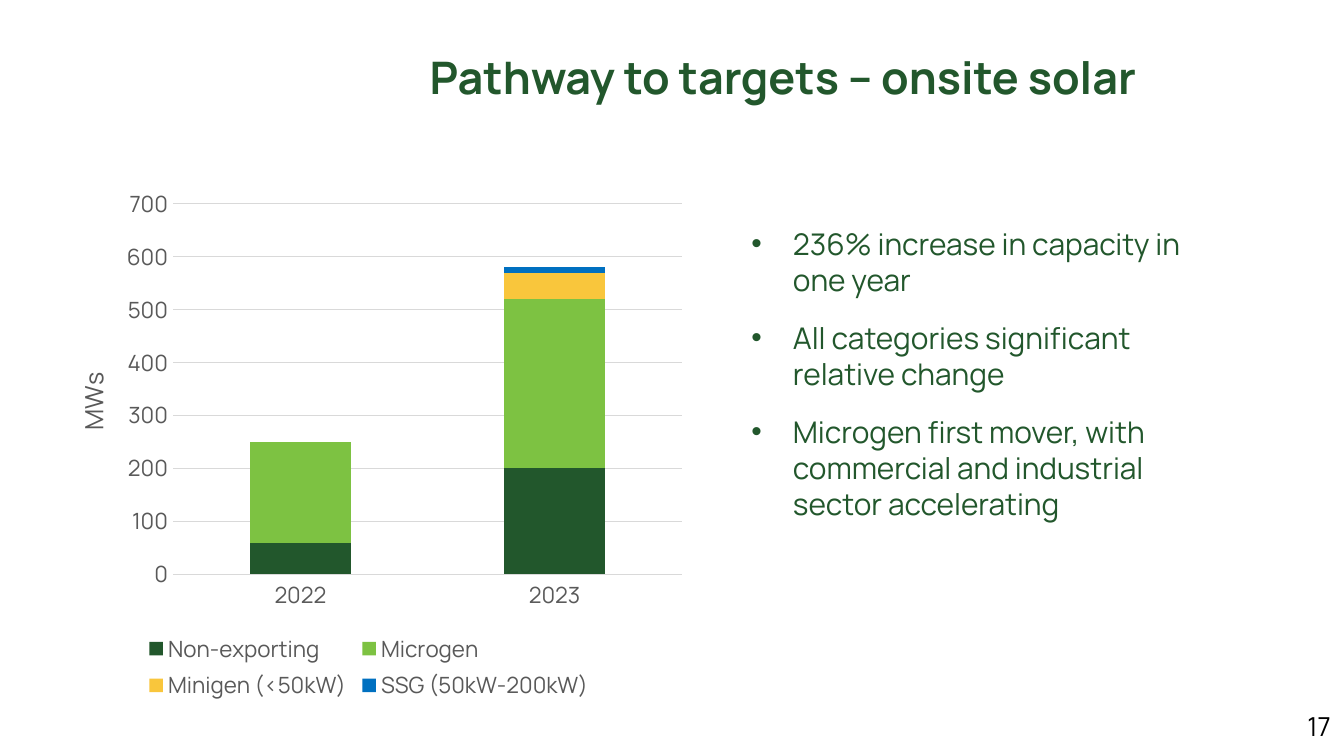
import pptx
import pptx.chart.data
import pptx.dml.color
import pptx.enum.chart
import pptx.enum.text
import pptx.oxml
import pptx.oxml.ns
import pptx.util

WIDTH = 10
HEIGHT = WIDTH * 9 / 16
FONT = "Manrope"
COLORS = {
    "forest": "22572C",
    "leaf": "7DC242",
    "sun": "F9C63C",
    "blue": "0070C0",
    "label": "595959",
    "grid": "D9D9D9",
    "black": "000000",
}
YEARS = ["2022", "2023"]
CAPACITY = [
    ("Non-exporting", (60, 200), "forest"),
    ("Microgen", (190, 320), "leaf"),
    ("Minigen (<50kW)", (0, 50), "sun"),
    ("SSG (50kW-200kW)", (0, 10), "blue"),
]
POINTS = [
    "236% increase in capacity in one year",
    "All categories significant relative change",
    "Microgen first mover, with commercial and industrial sector accelerating",
]


def rgb(name):
    return pptx.dml.color.RGBColor.from_string(COLORS[name])


def area(left, top, width, height):
    """Turn percentages of the slide's size into lengths."""
    across, down = WIDTH / 100, HEIGHT / 100
    lengths = (left * across, top * down, width * across, height * down)
    return [pptx.util.Inches(length) for length in lengths]


def move(shape, box):
    shape.left, shape.top, shape.width, shape.height = box


def style_font(font, size, color, bold=False):
    font.name = FONT
    font.size = pptx.util.Pt(size)
    font.bold = bold
    font.color.rgb = rgb(color)


def style_frame(frame, anchor, inset=0.1):
    frame.word_wrap = True
    frame.auto_size = pptx.enum.text.MSO_AUTO_SIZE.NONE
    frame.vertical_anchor = anchor
    frame.margin_left = frame.margin_right = pptx.util.Inches(0.1)
    frame.margin_top = frame.margin_bottom = pptx.util.Inches(inset)


def write_line(frame, text, align, size, color, bold=False):
    frame.text = text
    para = frame.paragraphs[0]
    para.alignment = align
    style_font(para.runs[0].font, size, color, bold)


def set_bullet(para):
    indent = pptx.util.Inches(0.31)
    properties = para._p.get_or_add_pPr()
    properties.set("marL", str(indent))
    properties.set("indent", str(-indent))
    names = pptx.oxml.ns.nsdecls("a")
    properties.append(pptx.oxml.parse_xml(
        f'<a:buClr {names}><a:srgbClr val="{COLORS["forest"]}"/></a:buClr>'))
    properties.append(pptx.oxml.parse_xml(f'<a:buChar {names} char="•"/>'))


def fill_list(body, points):
    frame = body.text_frame
    style_frame(frame, pptx.enum.text.MSO_ANCHOR.TOP, inset=0.05)
    frame.text = "\n".join(points)
    for para in frame.paragraphs:
        para.alignment = pptx.enum.text.PP_ALIGN.LEFT
        para.line_spacing = 1.0
        para.space_before = pptx.util.Pt(12)
        set_bullet(para)
        style_font(para.runs[0].font, 16, "forest")


def place_part(part, index, **shares):
    """Give a chart part a manual layout, in shares of the chart's size."""
    for layout in part.findall(pptx.oxml.ns.qn("c:layout")):
        part.remove(layout)
    modes = '<c:xMode val="edge"/><c:yMode val="edge"/>'
    target = '<c:layoutTarget val="inner"/>' if index == 0 else ""
    sizes = "".join(f'<c:{key} val="{share}"/>' for key, share in shares.items())
    part.insert(index, pptx.oxml.parse_xml(
        f'<c:layout {pptx.oxml.ns.nsdecls("c")}><c:manualLayout>'
        f'{target}{modes}{sizes}</c:manualLayout></c:layout>'))


def style_axes(chart):
    for axis in (chart.category_axis, chart.value_axis):
        axis.major_tick_mark = pptx.enum.chart.XL_TICK_MARK.NONE
        axis.minor_tick_mark = pptx.enum.chart.XL_TICK_MARK.NONE
        style_font(axis.tick_labels.font, 12, "label")
    values = chart.value_axis
    values.minimum_scale, values.maximum_scale, values.major_unit = 0, 700, 100
    values.format.line.fill.background()
    for line in (chart.category_axis.format.line, values.major_gridlines.format.line):
        line.color.rgb = rgb("grid")
        line.width = pptx.util.Pt(0.75)
    write_line(values.axis_title.text_frame, "MWs", None, 13.5, "label")
    place_part(values.axis_title._element, 1, x=0.04, y=0.36)


def add_capacity_chart(page, box):
    data = pptx.chart.data.CategoryChartData()
    data.categories = YEARS
    for name, values, _ in CAPACITY:
        data.add_series(name, values)
    kind = pptx.enum.chart.XL_CHART_TYPE.COLUMN_STACKED
    chart = page.shapes.add_chart(kind, *box, data).chart
    chart.has_title = False
    style_font(chart.font, 10, "black")
    plot = chart.plots[0]
    plot.gap_width, plot.overlap, plot.vary_by_categories = 150, 100, False
    for series, (_, _, color) in zip(plot.series, CAPACITY):
        series.format.fill.solid()
        series.format.fill.fore_color.rgb = rgb(color)
    style_axes(chart)
    chart.has_legend = True
    chart.legend.position = pptx.enum.chart.XL_LEGEND_POSITION.BOTTOM
    chart.legend.include_in_layout = False
    style_font(chart.legend.font, 12, "label")
    place_part(chart.legend._element, 1, x=0.15, y=0.85, w=0.7, h=0.15)
    plot_area = chart._chartSpace.chart.plotArea
    place_part(plot_area, 0, x=0.2, y=0.05, w=0.78, h=0.7)


def main():
    deck = pptx.Presentation()
    deck.slide_width = pptx.util.Inches(WIDTH)
    deck.slide_height = pptx.util.Inches(HEIGHT)
    page = deck.slides.add_slide(deck.slide_layouts[1])
    anchors, aligns = pptx.enum.text.MSO_ANCHOR, pptx.enum.text.PP_ALIGN

    title, body = page.placeholders
    move(title, area(17, 1.96, 82.5, 13.51))
    style_frame(title.text_frame, anchors.BOTTOM)
    write_line(title.text_frame, "Pathway to targets – onsite solar",
               aligns.CENTER, 24, "forest", bold=True)

    add_capacity_chart(page, area(3.2, 23.47, 48.5, 70.04))

    move(body, area(54.9, 28.98, 34.2, 41.24))
    fill_list(body, POINTS)

    number = page.shapes.add_textbox(*area(95.2, 92.27, 4.8, 7.64))
    style_frame(number.text_frame, anchors.MIDDLE)
    write_line(number.text_frame, "17", aligns.RIGHT, 14, "black")
    deck.save("out.pptx")


if __name__ == "__main__":
    main()
